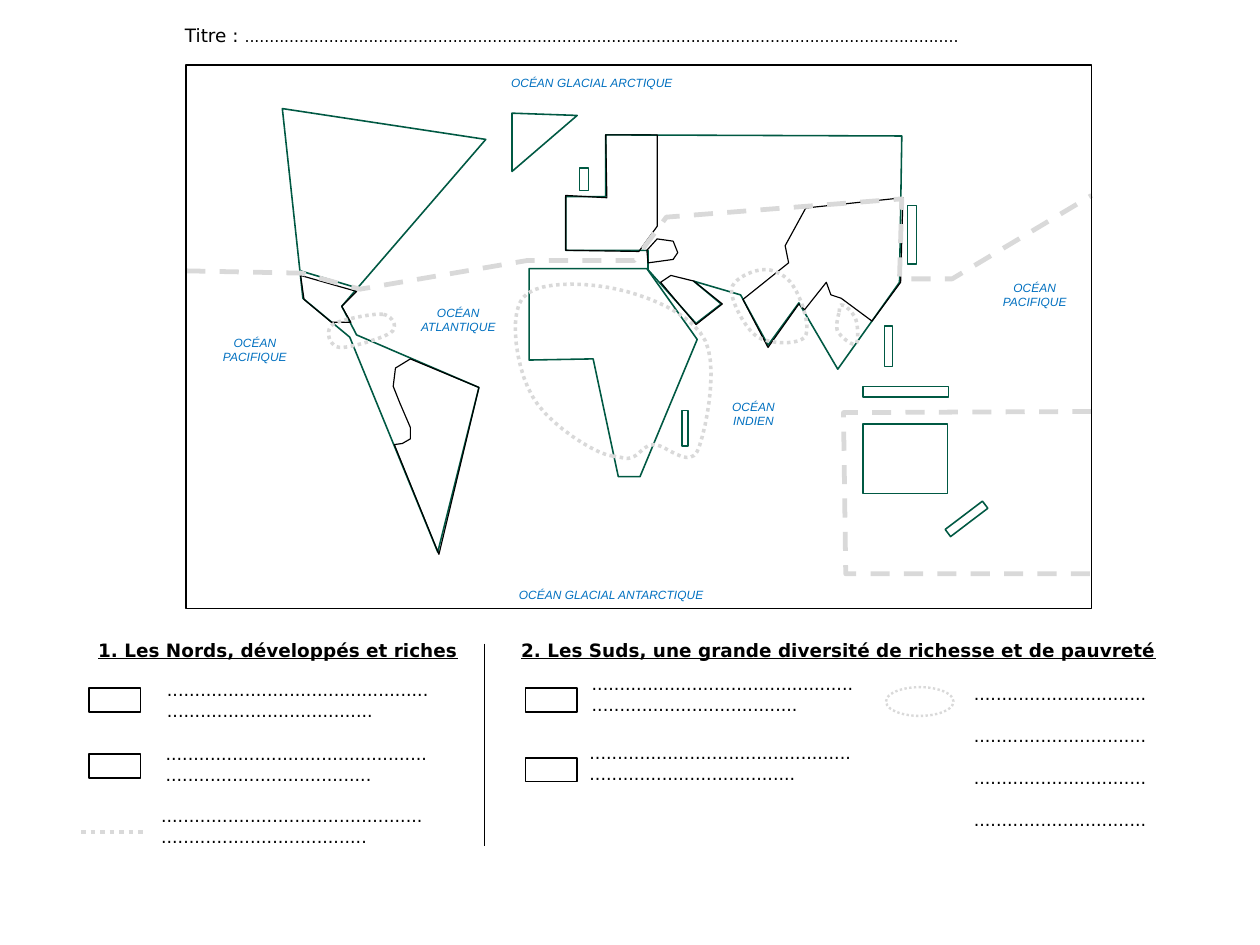
from lxml import etree
from pptx import Presentation
from pptx import util as u
from pptx.dml.color import RGBColor
from pptx.enum import dml, shapes, text
from pptx.oxml import ns

BLACK = RGBColor(0x00, 0x00, 0x00)
GREEN = RGBColor(0x00, 0x59, 0x43)
GREY = RGBColor(0xD9, 0xD9, 0xD9)
BLUE = RGBColor(0x00, 0x70, 0xC0)

LAND = {"color": GREEN, "width": 1}
BORDER = {"color": BLACK, "width": 0.75}
FRAME = {"color": BLACK, "width": 1}
NORTH_SOUTH = {"color": GREY, "width": 3, "dash": dml.MSO_LINE.DASH}
POOR_AREA = {"color": GREY, "width": 2.25, "dash": dml.MSO_LINE.ROUND_DOT}
POOR_KEY = {"color": GREY, "width": 1.5, "dash": dml.MSO_LINE.ROUND_DOT}
LIMIT_KEY = {"color": GREY, "width": 3, "dash": dml.MSO_LINE.ROUND_DOT}

OCEAN_FONT = {"name": "Arial", "size": u.Pt(7.5), "italic": True}
PLAIN_FONT = {"name": "DejaVu Sans", "size": u.Pt(11), "bold": False}
TITLE_FONT = {"name": "DejaVu Sans", "size": u.Pt(11.6)}
DOTS_FONT = {"name": "DejaVu Sans", "size": u.Pt(9.9)}
HEADING_FONT = {**TITLE_FONT, "bold": True, "underline": True}
TEXT_FRAME = {
    "word_wrap": True,
    "auto_size": text.MSO_AUTO_SIZE.NONE,
    "vertical_anchor": text.MSO_ANCHOR.TOP,
    "margin_left": u.Cm(0.2),
    "margin_right": u.Cm(0.2),
    "margin_top": u.Cm(0.08),
    "margin_bottom": u.Cm(0.08),
}
UNIT = u.Cm(2.54) / 100
CURVE_STEPS = 10


def draw_line(shape, color, width, dash=None):
    shape.line.color.rgb = color
    shape.line.width = u.Pt(width)
    if dash:
        shape.line.dash_style = dash
    if shape.shape_type == shapes.MSO_SHAPE_TYPE.LINE:
        etree.SubElement(shape._element.spPr, ns.qn("a:effectLst"))
    else:
        shape.fill.background()
        shape.shadow.inherit = False


def write(box, place, lines, color=BLACK, align=text.PP_ALIGN.LEFT, gap=0):
    box.left, box.top, box.width, box.height = map(u.Cm, place)
    for name, value in TEXT_FRAME.items():
        setattr(box.text_frame, name, value)
    for number, spans in enumerate(lines):
        para = box.text_frame.paragraphs[0] if number == 0 else box.text_frame.add_paragraph()
        para.alignment = align
        para.space_before = u.Pt(gap if number else 0)
        for words, font in spans:
            span = para.add_run()
            span.text = words
            span.font.color.rgb = color
            for name, value in font.items():
                setattr(span.font, name, value)


deck = Presentation()
deck.slide_width, deck.slide_height = u.Cm(28), u.Cm(21)
page = deck.slides.add_slide(deck.slide_layouts.get_by_name("Comparison"))
holders = {holder.placeholder_format.idx: holder for holder in page.placeholders}
for index, holder in holders.items():
    if index not in (0, 1, 3, 4):
        holder._element.getparent().remove(holder._element)

write(holders[0], (3.91, 0.46, 20.29, 0.94), [[("Titre : ", TITLE_FONT), ("." * 144, DOTS_FONT)]])
write(holders[1], (1.98, 14.12, 8.48, 0.94), [[("1. Les Nords, développés et riches", HEADING_FONT)]])
write(holders[3], (11.38, 14.12, 14.83, 0.94),
      [[("2. Les Suds, une grande diversité de richesse et de pauvreté", HEADING_FONT)]])
write(holders[4], (21.44, 15.09, 4.78, 4.39), [[("." * 31, PLAIN_FONT)]] * 4, gap=13.4)
for para in holders[4].text_frame.paragraphs:
    properties = para._p.get_or_add_pPr()
    properties.set("marL", "0")
    properties.set("indent", "0")
    etree.SubElement(properties, ns.qn("a:buNone"))

continents = [
    [(383, 483), (306, 295), (265, 261), (247, 95), (425, 122), (299, 268), (312, 293),
     (419, 339), (383, 483)],
    [(448, 99), (448, 150), (505, 101), (448, 99)],
    [(263, 237), (313, 252)],
    [(463, 235), (463, 315), (519, 314), (541, 417), (560, 417), (610, 297), (566, 235),
     (463, 235)],
    [(495, 219), (495, 172), (530, 172), (530, 118), (789, 119), (787, 247), (733, 323),
     (699, 265), (672, 302), (648, 258), (607, 246), (631, 266), (609, 283), (567, 236),
     (567, 219), (495, 219)],
]
europe = [(575, 118), (575, 198), (559, 220), (495, 219), (495, 171), (531, 173), (530, 118),
          (575, 118)]
southern_limit = [(955, 360), (738, 361), (740, 502), (955, 502)]
emerging = [
    [(263, 241), (266, 262), (290, 282), (307, 282), (299, 268), (312, 255), (263, 241)],
    [(359, 314), (346, 322), (344, 338), (350, 353), (359, 374), (359, 384), (352, 388),
     (345, 389), (384, 485), (419, 339), (359, 314)],
    [(566, 219), (575, 209), (589, 211), (593, 221), (589, 227), (567, 230), (566, 219)],
    [(705, 182), (687, 215), (690, 230), (650, 262), (672, 304), (699, 266), (704, 271),
     (723, 247), (727, 258), (736, 261), (763, 281), (788, 247), (790, 173), (705, 182)],
]
northern_limit = [(163, 237), (264, 239), (315, 253), (461, 228), (555, 228), (583, 190),
                  (789, 174), (787, 244), (833, 244), (955, 171)]
arabia = [(578, 247), (587, 241), (607, 246), (632, 266), (609, 284), (578, 247)]
poor_areas = [
    [(536, 399), (550, 401), (547, 402), (553, 400), (560, 398), (562, 390), (572, 389),
     (581, 388), (602, 410), (610, 395), (617, 380), (629, 322), (617, 298), (605, 274),
     (567, 259), (540, 253), (513, 247), (469, 245), (457, 261), (445, 277), (452, 324),
     (466, 347), (479, 371), (522, 398), (536, 399)],
    [(695, 252), (690, 242), (677, 235), (668, 236), (659, 236), (641, 244), (640, 253),
     (639, 263), (652, 288), (663, 295), (673, 301), (698, 302), (704, 295), (710, 287),
     (701, 261), (695, 252)],
    [(335, 275), (326, 274), (297, 280), (291, 284), (284, 289), (288, 303), (297, 304),
     (305, 305), (335, 296), (342, 291), (349, 286), (343, 276), (335, 275)],
    [(734, 274), (733, 278), (731, 286), (733, 290), (736, 295), (746, 303), (749, 301),
     (751, 299), (751, 286), (749, 280), (747, 274), (740, 267), (737, 267), (734, 266),
     (735, 270), (734, 274)],
]
rings = []
for knots in poor_areas:
    ring = [knots[0]]
    for start in range(0, len(knots) - 1, 3):
        for step in range(1, CURVE_STEPS + 1):
            t = step / CURVE_STEPS
            weights = ((1 - t) ** 3, 3 * t * (1 - t) ** 2, 3 * t * t * (1 - t), t ** 3)
            ring.append(tuple(
                sum(w * knot[axis] for w, knot in zip(weights, knots[start:start + 4]))
                for axis in (0, 1)))
    ring[-1] = ring[0]
    rings.append(ring)

outlines = [(points, LAND) for points in continents]
outlines += [(europe, BORDER), (southern_limit, NORTH_SOUTH)]
outlines += [(points, BORDER) for points in emerging]
outlines += [(northern_limit, NORTH_SOUTH), (arabia, BORDER)]
outlines += [(ring, POOR_AREA) for ring in rings]
for points, style in outlines:
    corners = [(x * UNIT, y * UNIT) for x, y in points]
    closed = corners[0] == corners[-1]
    builder = page.shapes.build_freeform(*corners[0])
    builder.add_line_segments(corners[1:-1] if closed else corners[1:], close=closed)
    draw_line(builder.convert_to_shape(), **style)

RECTANGLE, OVAL = shapes.MSO_SHAPE.RECTANGLE, shapes.MSO_SHAPE.OVAL
for kind, place, turn, style in [
    (RECTANGLE, (19.18, 9.42, 1.88, 1.55), 0, LAND),
    (RECTANGLE, (19.18, 8.59, 1.9, 0.23), 0, LAND),
    (RECTANGLE, (20.17, 4.57, 0.2, 1.3), 0, LAND),
    (RECTANGLE, (15.16, 9.12, 0.13, 0.79), 0, LAND),
    (RECTANGLE, (20.96, 11.43, 1.04, 0.2), 322.8, LAND),
    (RECTANGLE, (12.88, 3.73, 0.2, 0.51), 0, LAND),
    (RECTANGLE, (19.66, 7.24, 0.18, 0.91), 0, LAND),
    (RECTANGLE, (4.14, 1.45, 20.12, 12.07), 0, FRAME),
    (RECTANGLE, (1.98, 15.29, 1.14, 0.53), 0, FRAME),
    (RECTANGLE, (1.98, 16.76, 1.14, 0.53), 0, FRAME),
    (RECTANGLE, (11.68, 15.29, 1.14, 0.53), 0, FRAME),
    (RECTANGLE, (11.68, 16.84, 1.14, 0.53), 0, FRAME),
    (OVAL, (19.69, 15.27, 1.5, 0.64), 0, POOR_KEY),
]:
    shape = page.shapes.add_shape(kind, *map(u.Cm, place))
    shape.rotation = turn
    draw_line(shape, **style)

for ends, style in [((10.77, 14.3, 10.77, 18.8), BORDER), ((1.8, 18.49, 3.23, 18.49), LIMIT_KEY)]:
    line = page.shapes.add_connector(shapes.MSO_CONNECTOR.STRAIGHT, *map(u.Cm, ends))
    draw_line(line, **style)

for ocean, place in [
    ("OCÉAN PACIFIQUE", (4.62, 7.37, 2.09, 0.94)),
    ("OCÉAN INDIEN", (15.7, 8.79, 2.09, 0.94)),
    ("OCÉAN ATLANTIQUE", (9.14, 6.71, 2.09, 0.94)),
    ("OCÉAN PACIFIQUE", (21.95, 6.15, 2.09, 0.94)),
    ("OCÉAN GLACIAL ARCTIQUE", (9.58, 1.6, 7.14, 0.94)),
    ("OCÉAN GLACIAL ANTARCTIQUE", (10.01, 12.98, 7.14, 0.51)),
]:
    box = page.shapes.add_textbox(0, 0, 0, 0)
    write(box, place, [[(ocean, OCEAN_FONT)]], BLUE, text.PP_ALIGN.CENTER)

for left, top in [(3.51, 15.01), (3.48, 16.43), (3.38, 17.81), (12.95, 14.88), (12.9, 16.41)]:
    box = page.shapes.add_textbox(0, 0, 0, 0)
    write(box, (left, top, 6.28, 1.17), [[("." * 84, PLAIN_FONT)]])

deck.save("out.pptx")
